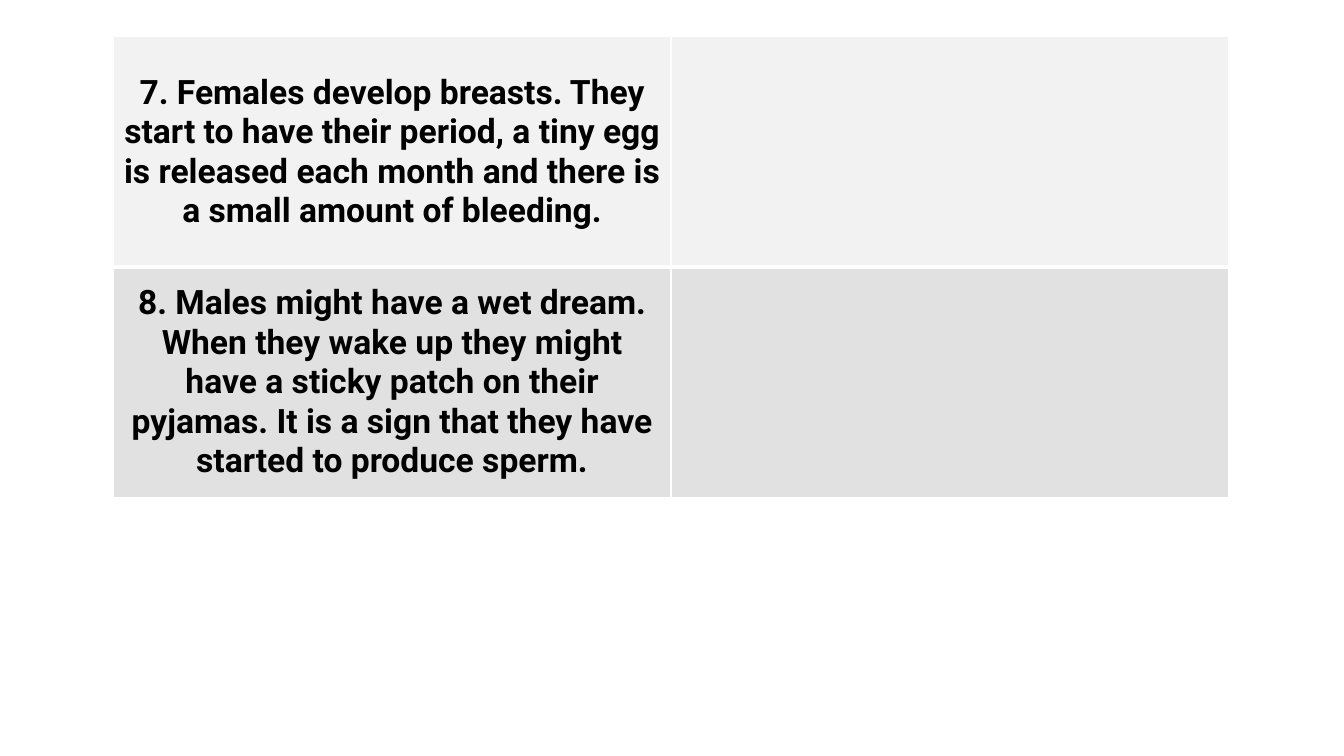
from lxml import etree
from pptx import Presentation
from pptx.dml.color import RGBColor
from pptx.enum.text import MSO_ANCHOR, PP_ALIGN
from pptx.oxml.ns import qn
from pptx.util import Cm, Pt

MIDDLE = MSO_ANCHOR.MIDDLE
CENTER = PP_ALIGN.CENTER
BLANK_LAYOUT = 6
STATEMENTS = [
    ("7. Females develop breasts. They start to have their period, a tiny egg "
     "is released each month and there is a small amount of bleeding.", "F2F2F2"),
    ("8. Males might have a wet dream. When they wake up they might have a sticky "
     "patch on their pyjamas. It is a sign that they have started to produce sperm.",
     "E1E1E1"),
]


def colour(code):
    return RGBColor.from_string(code)


class Worksheet:
    font = "Roboto"
    size = 24
    ink = "000000"
    border = "FFFFFF"
    thin = 1
    thick = 3

    def __init__(self, deck):
        self.page = deck.slides.add_slide(deck.slide_layouts[BLANK_LAYOUT])

    def table(self, statements, left, top, width, height):
        frame = self.page.shapes.add_table(len(statements), 2, left, top, width, height)
        table = frame.table
        for row, (statement, fill) in enumerate(statements):
            widths = {
                "L": self.thin,
                "R": self.thin,
                "T": self.thick if row > 0 else self.thin,
                "B": self.thick if row < len(statements) - 1 else self.thin,
            }
            for column, text in enumerate((statement, "")):
                cell = table.cell(row, column)
                cell.fill.solid()
                cell.fill.fore_color.rgb = colour(fill)
                self.borders(cell, widths)
                if text:
                    self.statement(cell, text)

    def statement(self, cell, text):
        cell.vertical_anchor = MIDDLE
        cell.text_frame.text = text
        para = cell.text_frame.paragraphs[0]
        para.alignment = CENTER
        font = para.runs[0].font
        font.name = self.font
        font.size = Pt(self.size)
        font.bold = True
        font.color.rgb = colour(self.ink)

    def borders(self, cell, widths):
        properties = cell._tc.get_or_add_tcPr()
        for position, (side, width) in enumerate(widths.items()):
            line = etree.Element(qn(f"a:ln{side}"), w=str(Pt(width)))
            fill = etree.SubElement(line, qn("a:solidFill"))
            etree.SubElement(fill, qn("a:srgbClr"), val=self.border)
            properties.insert(position, line)


def main():
    deck = Presentation()
    deck.slide_width = Cm(33.87)
    deck.slide_height = Cm(19.05)
    sheet = Worksheet(deck)
    sheet.table(STATEMENTS, Cm(2.85), Cm(0.92), Cm(28.12), Cm(11.62))
    deck.save("out.pptx")


if __name__ == "__main__":
    main()
